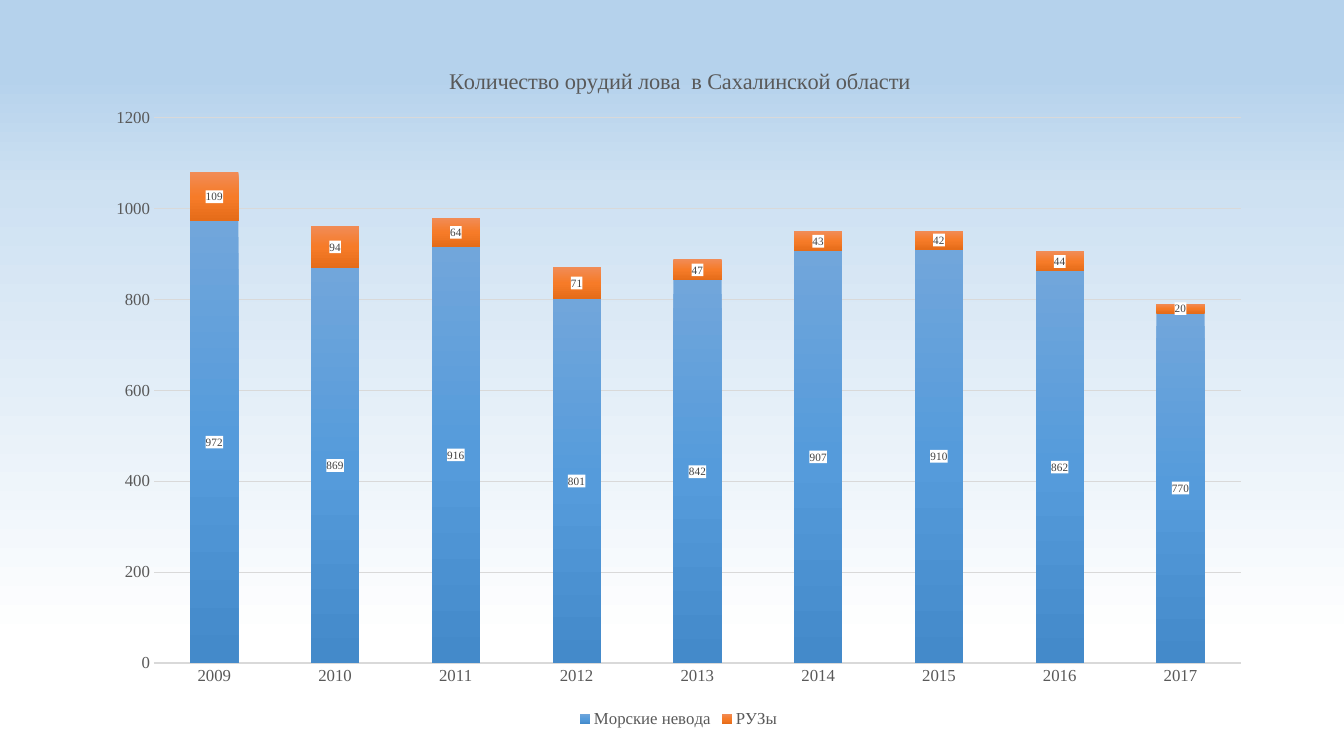
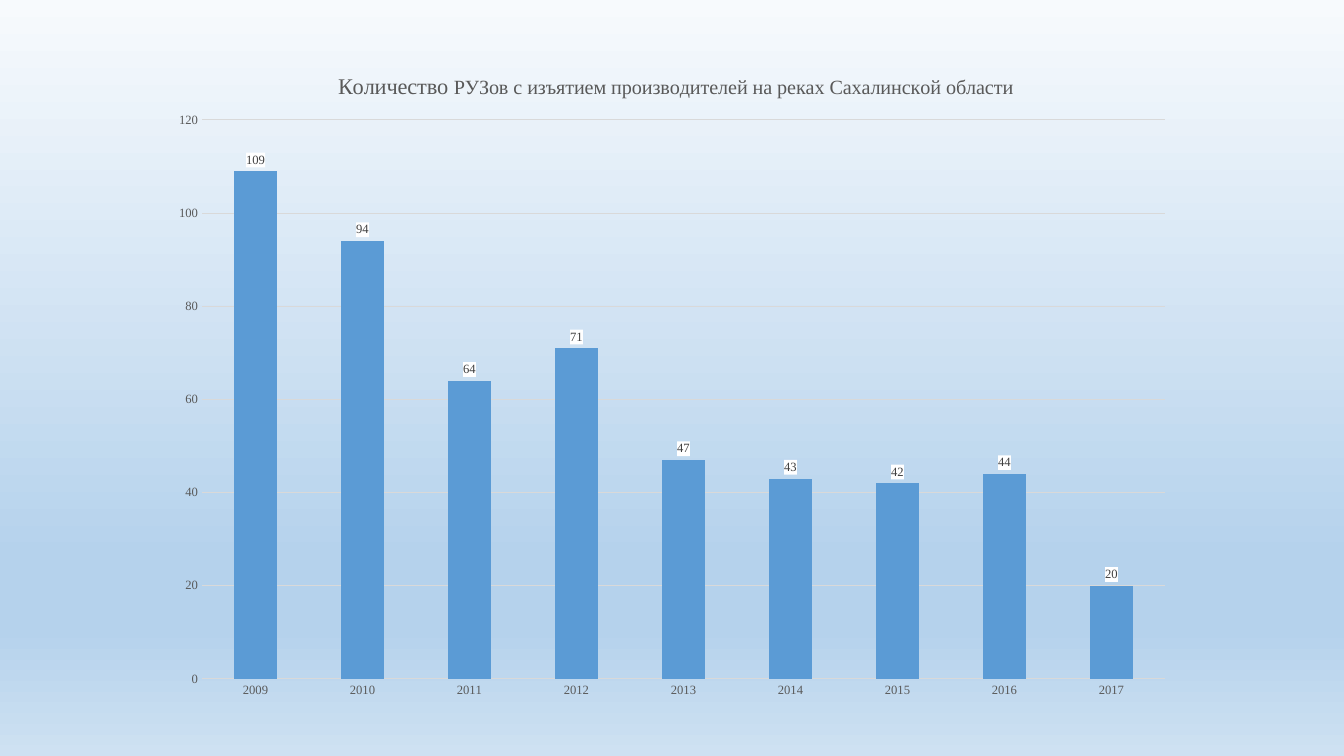
from dataclasses import dataclass

from lxml.etree import _Element
from pptx import Presentation
from pptx.chart.axis import CategoryAxis, ValueAxis
from pptx.chart.chart import Chart
from pptx.chart.data import CategoryChartData
from pptx.chart.series import BarSeries
from pptx.dml.color import RGBColor
from pptx.dml.fill import FillFormat
from pptx.enum.chart import XL_CHART_TYPE, XL_LABEL_POSITION, XL_LEGEND_POSITION, XL_TICK_MARK
from pptx.oxml import parse_xml
from pptx.oxml.ns import nsdecls, qn
from pptx.presentation import Presentation as Deck
from pptx.text.text import Font
from pptx.util import Emu, Pt

EMU_PER_PX = 914400 / 100.8


@dataclass(frozen=True)
class Stop:
    place: int
    color: str
    opacity: int = 100


@dataclass(frozen=True)
class Theme:
    typeface: str = "Times New Roman"
    black: str = "000000"
    text: str = "595959"
    label: str = "404040"
    label_box: str = "FFFFFF"
    label_box_opacity: int = 75
    rule: str = "D9D9D9"
    solid_bar: str = "5B9BD5"
    base_size: float = 10
    title_size: float = 16
    small_title_size: float = 14.4
    axis_size: float = 12
    small_axis_size: float = 9
    label_size: float = 8
    axis_line: float = 1
    grid_line: float = 0.75


@dataclass(frozen=True)
class Box:
    left: int
    top: int
    width: int
    height: int


@dataclass(frozen=True)
class TitleSpan:
    text: str
    size: float


@dataclass(frozen=True)
class Bars:
    name: str
    values: tuple[int, ...]
    stops: tuple[Stop, ...]


@dataclass(frozen=True)
class ChartPage:
    background: tuple[Stop, ...]
    frame: Box
    plot: Box
    title_left: int
    title_top: int
    title: tuple[TitleSpan, ...]
    kind: XL_CHART_TYPE
    bars: tuple[Bars, ...]
    label_position: XL_LABEL_POSITION
    axis_size: float
    label_size: float
    maximum: int
    step: int
    stacked: bool


THEME = Theme()
YEARS = tuple(str(year) for year in range(2009, 2018))
SEINES = (972, 869, 916, 801, 842, 907, 910, 862, 770)
BARRIERS = (109, 94, 64, 71, 47, 43, 42, 44, 20)

PAGES = (
    ChartPage(
        background=(Stop(0, "B5D2EC"), Stop(10, "B5D2EC"), Stop(25, "CEE1F2"), Stop(85, "FFFFFF", 17)),
        frame=Box(93, 37, 1171, 695),
        plot=Box(154, 118, 1087, 545),
        title_left=445,
        title_top=63,
        title=(TitleSpan("Количество орудий лова  в Сахалинской области", THEME.title_size),),
        kind=XL_CHART_TYPE.COLUMN_STACKED,
        bars=(
            Bars("Морские невода", SEINES, (Stop(0, "71A6DB"), Stop(50, "559BDB"), Stop(100, "448ACA"))),
            Bars("РУЗы", BARRIERS, (Stop(0, "F18C57"), Stop(50, "F67B28"), Stop(100, "E56C19"))),
        ),
        label_position=XL_LABEL_POSITION.CENTER,
        axis_size=THEME.axis_size,
        label_size=THEME.label_size,
        maximum=1200,
        step=200,
        stacked=True,
    ),
    ChartPage(
        background=(Stop(0, "F7FAFD"), Stop(74, "B5D2EC"), Stop(83, "B5D2EC"), Stop(100, "CEE1F2")),
        frame=Box(158, 45, 1026, 665),
        plot=Box(202, 120, 963, 559),
        title_left=335,
        title_top=69,
        title=(
            TitleSpan("Количество ", THEME.title_size),
            TitleSpan("РУЗов с изъятием производителей на реках Сахалинской области", THEME.small_title_size),
        ),
        kind=XL_CHART_TYPE.COLUMN_CLUSTERED,
        bars=(Bars("РУЗы", BARRIERS, (Stop(0, THEME.solid_bar),)),),
        label_position=XL_LABEL_POSITION.OUTSIDE_END,
        axis_size=THEME.small_axis_size,
        label_size=THEME.small_axis_size,
        maximum=120,
        step=20,
        stacked=False,
    ),
)


def px(length: int) -> Emu:
    return Emu(round(length * EMU_PER_PX))


def rgb(color: str) -> RGBColor:
    return RGBColor.from_string(color)


def set_font(font: Font, size: float, color: str) -> None:
    font.name = THEME.typeface
    font.size = Pt(size)
    font.bold = False
    font.color.rgb = rgb(color)


def color_xml(color: str, opacity: int) -> str:
    alpha = f'<a:alpha val="{opacity * 1000}"/>' if opacity < 100 else ""
    return f'<a:srgbClr val="{color}">{alpha}</a:srgbClr>'


def paint(fill: FillFormat, owner: _Element, stops: tuple[Stop, ...]) -> None:
    if len(stops) == 1:
        fill.solid()
        fill.fore_color.rgb = rgb(stops[0].color)
        return
    fill.gradient()
    old = next(owner.iter(qn("a:gradFill")))
    marks = "".join(
        f'<a:gs pos="{stop.place * 1000}">{color_xml(stop.color, stop.opacity)}</a:gs>' for stop in stops
    )
    new = parse_xml(
        f'<a:gradFill {nsdecls("a")} rotWithShape="1"><a:gsLst>{marks}</a:gsLst>'
        '<a:lin ang="5400000" scaled="0"/></a:gradFill>'
    )
    old.getparent().replace(old, new)


def layout(frame: Box, left: int, top: int, size: tuple[int, int] | None = None) -> _Element:
    parts = {"x": (left - frame.left) / frame.width, "y": (top - frame.top) / frame.height}
    target = ""
    if size:
        target = '<c:layoutTarget val="inner"/>'
        parts |= {"w": size[0] / frame.width, "h": size[1] / frame.height}
    modes = '<c:xMode val="edge"/><c:yMode val="edge"/>'
    values = "".join(f'<c:{name} val="{value:.4f}"/>' for name, value in parts.items())
    return parse_xml(
        f'<c:layout {nsdecls("c")}><c:manualLayout>{target}{modes}{values}</c:manualLayout></c:layout>'
    )


def remove_layout(owner: _Element) -> None:
    for old in owner.findall(qn("c:layout")):
        owner.remove(old)


def add_title(chart: Chart, page: ChartPage) -> None:
    chart.has_title = True
    para = chart.chart_title.text_frame.paragraphs[0]
    for part in page.title:
        span = para.add_run()
        span.text = part.text
        set_font(span.font, part.size, THEME.text)
    title = next(chart.element.iter(qn("c:title")))
    remove_layout(title)
    title.find(qn("c:tx")).addnext(layout(page.frame, page.title_left, page.title_top))


def place_plot(chart: Chart, page: ChartPage) -> None:
    area = next(chart.element.iter(qn("c:plotArea")))
    remove_layout(area)
    area.insert(0, layout(page.frame, page.plot.left, page.plot.top, (page.plot.width, page.plot.height)))


def style_axis(axis: CategoryAxis | ValueAxis, size: float, line: bool) -> None:
    axis.major_tick_mark = XL_TICK_MARK.NONE
    axis.minor_tick_mark = XL_TICK_MARK.NONE
    set_font(axis.tick_labels.font, size, THEME.text)
    if line:
        axis.format.line.color.rgb = rgb(THEME.rule)
        axis.format.line.width = Pt(THEME.axis_line)
    else:
        axis.format.line.fill.background()


def style_axes(chart: Chart, page: ChartPage) -> None:
    style_axis(chart.category_axis, page.axis_size, page.stacked)
    chart.category_axis.has_major_gridlines = False
    values = chart.value_axis
    style_axis(values, page.axis_size, False)
    values.minimum_scale = 0
    values.maximum_scale = page.maximum
    values.major_unit = page.step
    values.has_major_gridlines = True
    grid = values.major_gridlines.format.line
    grid.color.rgb = rgb(THEME.rule)
    grid.width = Pt(THEME.grid_line)


def style_bars(series: BarSeries, owner: _Element, bars: Bars, page: ChartPage) -> None:
    paint(series.format.fill, owner, bars.stops)
    series.format.line.fill.background()
    series.invert_if_negative = False
    labels = series.data_labels
    labels.show_value = True
    labels.position = page.label_position
    set_font(labels.font, page.label_size, THEME.label)
    backing = parse_xml(
        f'<c:spPr {nsdecls("c", "a")}><a:solidFill>'
        f'{color_xml(THEME.label_box, THEME.label_box_opacity)}'
        '</a:solidFill><a:ln><a:noFill/></a:ln></c:spPr>'
    )
    owner.find(qn("c:dLbls")).find(qn("c:txPr")).addprevious(backing)


def add_legend(chart: Chart, size: float) -> None:
    chart.has_legend = True
    chart.legend.position = XL_LEGEND_POSITION.BOTTOM
    chart.legend.include_in_layout = False
    set_font(chart.legend.font, size, THEME.text)


def add_page(deck: Deck, page: ChartPage) -> None:
    slide = deck.slides.add_slide(deck.slide_layouts[6])
    paint(slide.background.fill, slide.element, page.background)
    data = CategoryChartData()
    data.categories = YEARS
    for bars in page.bars:
        data.add_series(bars.name, bars.values)
    frame = page.frame
    chart = slide.shapes.add_chart(
        page.kind, px(frame.left), px(frame.top), px(frame.width), px(frame.height), data
    ).chart
    set_font(chart.font, THEME.base_size, THEME.black)
    add_title(chart, page)
    place_plot(chart, page)
    style_axes(chart, page)
    plot = chart.plots[0]
    plot.vary_by_categories = False
    plot.gap_width = 150
    plot.overlap = 100 if page.stacked else 0
    for series, owner, bars in zip(plot.series, chart.element.iter(qn("c:ser")), page.bars):
        style_bars(series, owner, bars, page)
    chart.has_legend = False
    if page.stacked:
        add_legend(chart, page.axis_size)


def main() -> None:
    deck = Presentation()
    deck.slide_width = px(1344)
    deck.slide_height = px(756)
    for page in PAGES:
        add_page(deck, page)
    deck.save("out.pptx")


if __name__ == "__main__":
    main()
